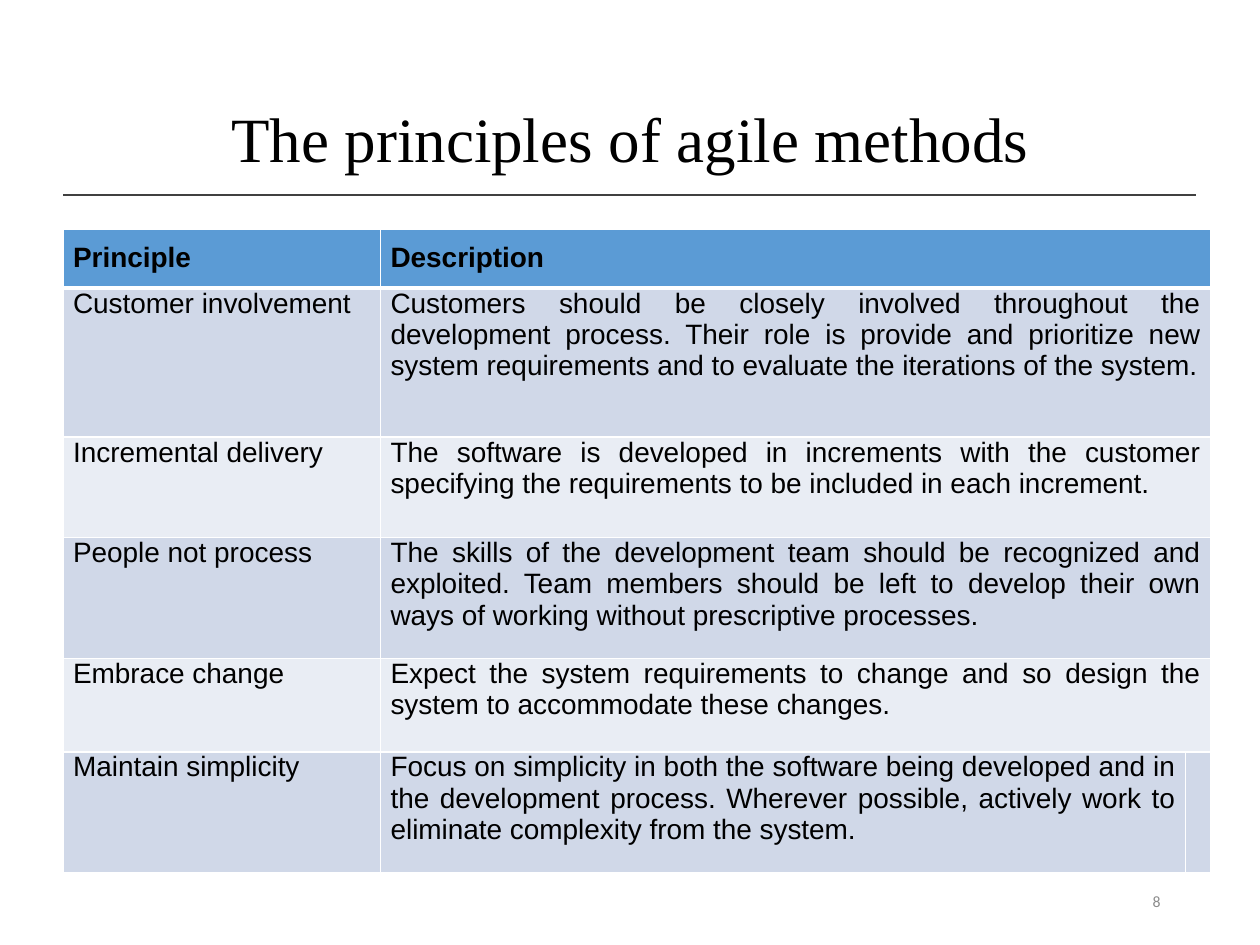
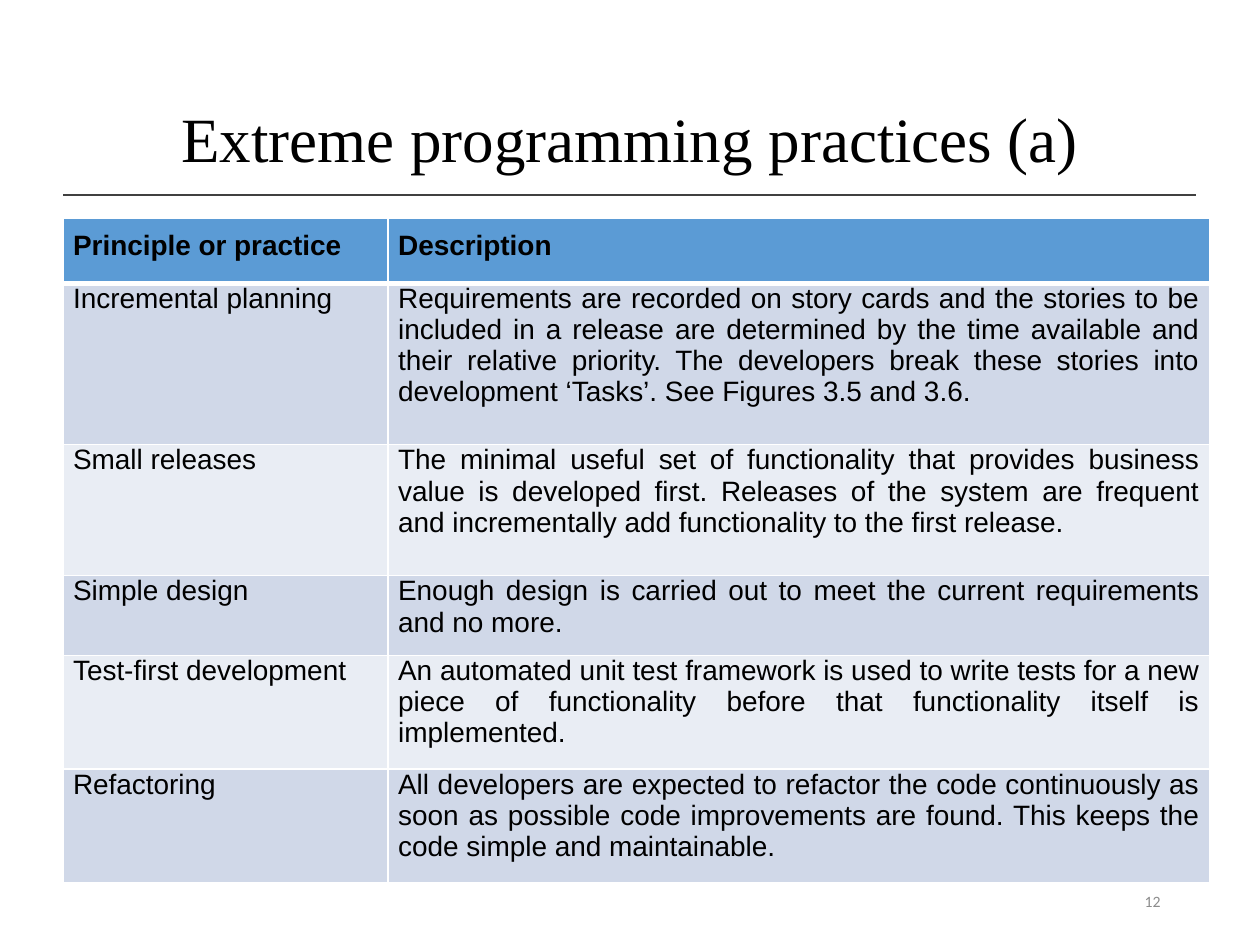
from dataclasses import dataclass

from lxml.etree import SubElement
from pptx import Presentation
from pptx.dml.color import RGBColor
from pptx.enum.shapes import MSO_CONNECTOR
from pptx.enum.text import MSO_ANCHOR, PP_ALIGN
from pptx.oxml.ns import qn
from pptx.util import Inches, Pt


@dataclass(frozen=True)
class Theme:
    ink: str = "000000"
    rule: str = "404040"
    number: str = "8C8C8C"
    header: str = "5B9BD5"
    bands: tuple = ("D0D8E8", "E9EDF4")
    border: str = "FFFFFF"
    title_font: str = "Times New Roman"
    table_font: str = "Arial"
    number_font: str = "Calibri"
    title_size: int = 36
    table_size: int = 16
    number_size: int = 9
    thin: int = 1
    thick: int = 3


theme = Theme()

slides = [
    {
        "title": "The principles of agile methods",
        "number": "8",
        "top": 1.82,
        "columns": [2.52, 6.39, 0.14],
        "heights": [0.44, 1.18, 0.8, 0.96, 0.74, 0.96],
        "merged_rows": range(5),
        "rows": [
            ("Principle", "Description"),
            ("Customer involvement",
             "Customers should be closely involved throughout the development process. "
             "Their role is provide and prioritize new system requirements and to "
             "evaluate the iterations of the system."),
            ("Incremental delivery",
             "The software is developed in increments with the customer specifying "
             "the requirements to be included in each increment."),
            ("People not process",
             "The skills of the development team should be recognized and exploited. "
             "Team members should be left to develop their own ways of working "
             "without prescriptive processes."),
            ("Embrace change",
             "Expect the system requirements to change and so design the system to "
             "accommodate these changes."),
            ("Maintain simplicity",
             "Focus on simplicity in both the software being developed and in the "
             "development process. Wherever possible, actively work to eliminate "
             "complexity from the system."),
        ],
    },
    {
        "title": "Extreme programming practices (a)",
        "number": "12",
        "top": 1.73,
        "columns": [2.58, 6.52],
        "heights": [0.52, 1.28, 1.04, 0.6, 0.84, 0.84],
        "merged_rows": [],
        "rows": [
            ("Principle or practice", "Description"),
            ("Incremental planning",
             "Requirements are recorded on story cards and the stories to be included "
             "in a release are determined by the time available and their relative "
             "priority. The developers break these stories into development ‘Tasks’. "
             "See Figures 3.5 and 3.6."),
            ("Small releases",
             "The minimal useful set of functionality that provides business value is "
             "developed first. Releases of the system are frequent and incrementally "
             "add functionality to the first release."),
            ("Simple design",
             "Enough design is carried out to meet the current requirements and no more."),
            ("Test-first development",
             "An automated unit test framework is used to write tests for a new piece "
             "of functionality before that functionality itself is implemented."),
            ("Refactoring",
             "All developers are expected to refactor the code continuously as soon as "
             "possible code improvements are found. This keeps the code simple and "
             "maintainable."),
        ],
    },
]


def write(frame, text, font, size, color, align, bold=False):
    para = frame.paragraphs[0]
    para.alignment = align
    span = para.add_run()
    span.text = text
    span.font.name = font
    span.font.size = Pt(size)
    span.font.bold = bold
    span.font.color.rgb = RGBColor.from_string(color)
    return para


def style_cell(cell, row):
    properties = cell._tc.get_or_add_tcPr()
    widths = {
        "L": theme.thin,
        "R": theme.thin,
        "T": theme.thick if row == 1 else theme.thin,
        "B": theme.thick if row == 0 else theme.thin,
    }
    for side, width in widths.items():
        edge = SubElement(properties, qn(f"a:ln{side}"), w=str(Pt(width)))
        fill = SubElement(edge, qn("a:solidFill"))
        SubElement(fill, qn("a:srgbClr"), val=theme.border)
    cell.fill.solid()
    color = theme.header if row == 0 else theme.bands[(row - 1) % 2]
    cell.fill.fore_color.rgb = RGBColor.from_string(color)
    cell.margin_left = cell.margin_right = Inches(0.08)
    cell.margin_top = Inches(0.1 if row == 0 else 0)
    cell.margin_bottom = Inches(0.1)


deck = Presentation()
deck.slide_width = Inches(10)
deck.slide_height = Inches(7.5)
title_only = deck.slide_layouts[5]

for content in slides:
    page = deck.slides.add_slide(title_only)

    title = page.shapes.title
    title.left, title.top = Inches(0.69), Inches(0.4)
    title.width, title.height = Inches(8.62), Inches(1.45)
    title.text_frame.vertical_anchor = MSO_ANCHOR.MIDDLE
    heading = write(title.text_frame, content["title"], theme.title_font,
                    theme.title_size, theme.ink, PP_ALIGN.CENTER)
    heading.line_spacing = 0.9

    rule = page.shapes.add_connector(
        MSO_CONNECTOR.STRAIGHT, Inches(0.5), Inches(1.55), Inches(9.49), Inches(1.55))
    rule.line.color.rgb = RGBColor.from_string(theme.rule)
    rule.line.width = Pt(theme.thin)
    SubElement(rule._element.spPr, qn("a:effectLst"))

    number_box = page.shapes.add_textbox(
        Inches(7.06), Inches(6.95), Inches(2.25), Inches(0.4))
    number_box.text_frame.word_wrap = True
    number_box.text_frame.vertical_anchor = MSO_ANCHOR.MIDDLE
    write(number_box.text_frame, content["number"], theme.number_font,
          theme.number_size, theme.number, PP_ALIGN.RIGHT)

    columns, heights = content["columns"], content["heights"]
    table = page.shapes.add_table(
        len(heights), len(columns), Inches(0.5), Inches(content["top"]),
        Inches(sum(columns)), Inches(sum(heights))).table
    for column, width in zip(table.columns, columns):
        column.width = Inches(width)
    for row, texts in enumerate(content["rows"]):
        table.rows[row].height = Inches(heights[row])
        for cell in table.rows[row].cells:
            style_cell(cell, row)
        if row in content["merged_rows"]:
            table.cell(row, 1).merge(table.cell(row, 2))
        for column, text in enumerate(texts):
            write(table.cell(row, column).text_frame, text, theme.table_font,
                  theme.table_size, theme.ink, PP_ALIGN.JUSTIFY, bold=row == 0)

deck.save("out.pptx")
